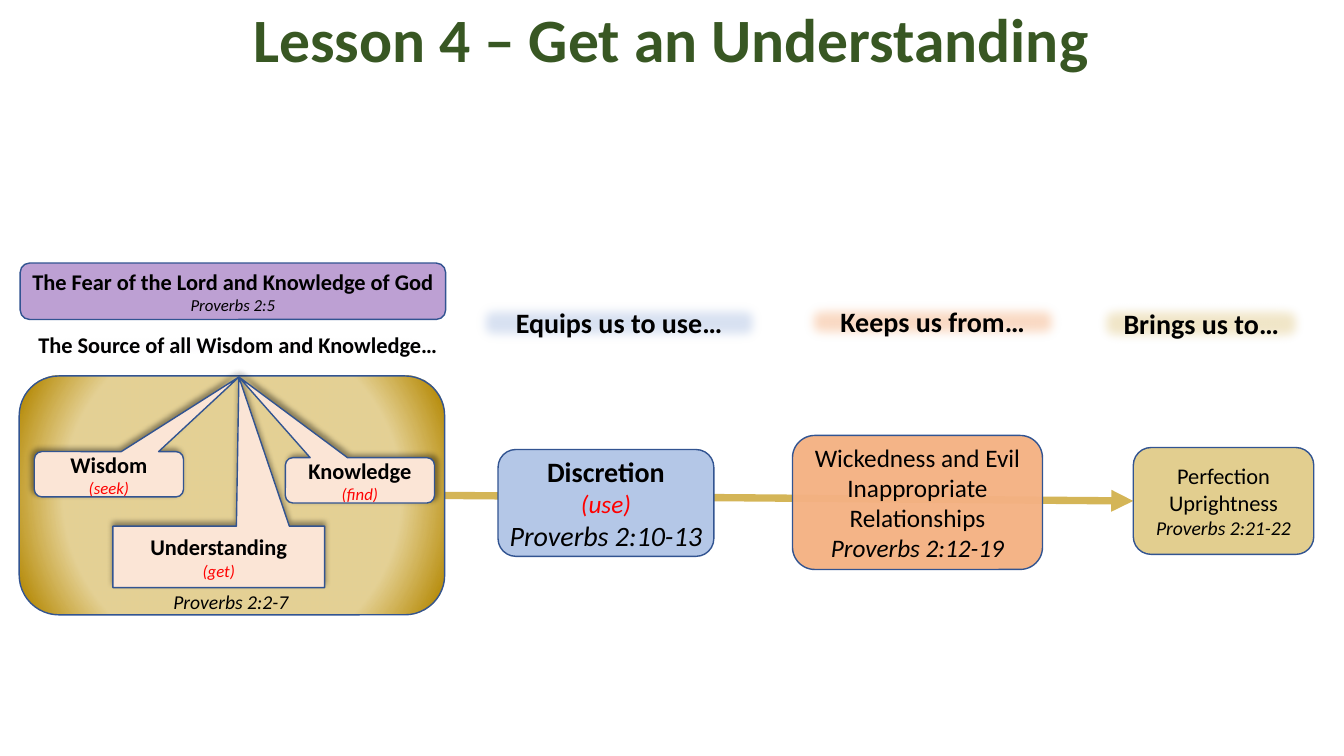
from dataclasses import dataclass

from lxml import etree
from pptx import Presentation
from pptx.dml.color import RGBColor
from pptx.enum.shapes import MSO_CONNECTOR, MSO_SHAPE
from pptx.enum.text import MSO_ANCHOR, PP_ALIGN
from pptx.oxml.ns import qn
from pptx.util import Inches, Pt

CENTER = PP_ALIGN.CENTER
TOP, MIDDLE = MSO_ANCHOR.TOP, MSO_ANCHOR.MIDDLE
RECT, ROUND = MSO_SHAPE.RECTANGLE, MSO_SHAPE.ROUNDED_RECTANGLE
SQUARE_CALLOUT = MSO_SHAPE.RECTANGULAR_CALLOUT
ROUND_CALLOUT = MSO_SHAPE.ROUNDED_RECTANGULAR_CALLOUT
STRAIGHT = MSO_CONNECTOR.STRAIGHT
LEFT_SIDE, RIGHT_SIDE = 1, 3
TITLE_ONLY = 5
CELL = 0.1  # inches per grid column and row
EMU_POINT, THOUSANDTHS, DEGREE = 12700, 1000, 60000


@dataclass(frozen=True)
class Theme:
    font: str = "Calibri"
    ink: str = "000000"
    cue: str = "FF0000"
    title: str = "385723"
    outline: str = "325491"
    gold: str = "BF9000"
    deep_gold: str = "B28600"
    purple: str = "7030A0"
    orange: str = "F4B183"
    blue: str = "B4C7E7"
    cream: str = "FBE5D6"
    title_size: int = 44
    large: int = 20
    medium: int = 18
    body: int = 16
    note: int = 14
    small: int = 12
    soft_edge: float = 8.86


def add_node(parent, tag, **attributes):
    values = {name: str(value) for name, value in attributes.items()}
    return etree.SubElement(parent, qn(f"a:{tag}"), values)


def set_alpha(element, percent):
    for color in element.iter(qn("a:srgbClr")):
        add_node(color, "alpha", val=percent * THOUSANDTHS)


class Page:
    """One slide with its theme; all places are in grid cells."""

    def __init__(self, deck, theme):
        self.theme = theme
        self.slide = deck.slides.add_slide(deck.slide_layouts[TITLE_ONLY])
        self.shapes = self.slide.shapes

    def place(self, cells):
        return [Inches(cell * CELL) for cell in cells]

    def set_lines(self, box, lines, anchor=MIDDLE, inset=0.04):
        """Each line is (words, size, style): b bold, i italic, c cue colour."""
        frame = box.text_frame
        frame.word_wrap = True
        frame.vertical_anchor = anchor
        frame.margin_left = frame.margin_right = Inches(inset)
        frame.margin_top = frame.margin_bottom = Inches(inset / 2)
        for index, (words, size, style) in enumerate(lines):
            para = frame.add_paragraph() if index else frame.paragraphs[0]
            para.text = words
            para.alignment = CENTER
            color = self.theme.cue if "c" in style else self.theme.ink
            self.set_font(para.font, size, color, "b" in style, "i" in style)

    def set_font(self, font, size, color, bold=False, italic=False):
        font.name, font.size = self.theme.font, Pt(size)
        font.bold, font.italic = bold, italic
        font.color.rgb = RGBColor.from_string(color)

    def title(self, cells, words):
        box = self.shapes.title
        box.left, box.top, box.width, box.height = self.place(cells)
        box.text_frame.vertical_anchor = TOP
        para = box.text_frame.paragraphs[0]
        para.text, para.alignment, para.line_spacing = words, CENTER, 0.9
        self.set_font(para.font, self.theme.title_size, self.theme.title, bold=True)

    def label(self, cells, lines):
        self.set_lines(self.shapes.add_textbox(*self.place(cells)), lines, inset=0.06)

    def panel(self, cells, fill, lines=(), alpha=100, kind=ROUND, outlined=True,
              **text_options):
        box = self.shapes.add_shape(kind, *self.place(cells))
        box.fill.solid()
        box.fill.fore_color.rgb = RGBColor.from_string(fill)
        if alpha < 100:
            set_alpha(box._element.spPr.find(qn("a:solidFill")), alpha)
        if outlined:
            box.line.color.rgb = RGBColor.from_string(self.theme.outline)
            box.line.width = Pt(1)
        else:
            box.line.fill.background()
        box.shadow.inherit = False
        self.set_lines(box, lines, **text_options)
        return box

    def effects(self, box):
        return box._element.spPr.find(qn("a:effectLst"))

    def heading(self, cells, fill, alpha, words, size, anchor=MIDDLE):
        """A caption on a soft-edged band."""
        box = self.panel(cells, fill, [(words, size, "b")], alpha, RECT, False,
                         anchor=anchor)
        add_node(self.effects(box), "softEdge",
                 rad=round(self.theme.soft_edge * EMU_POINT))

    def callout(self, cells, tip, kind, name, cue, direction):
        lines = [(name, self.theme.body, "b"), (cue, self.theme.small, "ic")]
        box = self.panel(cells, self.theme.cream, lines, kind=kind, inset=0.06)
        left, top, width, height = cells
        box.adjustments[0] = (tip[0] - left) / width - 0.5
        box.adjustments[1] = (tip[1] - top) / height - 0.5
        shadow = add_node(self.effects(box), "outerShdw", blurRad=4 * EMU_POINT,
                          dist=3 * EMU_POINT, dir=direction * DEGREE, rotWithShape=0)
        add_node(shadow, "srgbClr", val=self.theme.ink)
        set_alpha(shadow, 40)

    def glow(self, box, stops):
        """Swap the plain fill for a gradient around the centre."""
        solid = box._element.spPr.find(qn("a:solidFill"))
        gradient = etree.Element(qn("a:gradFill"), {"rotWithShape": "1"})
        stop_list = add_node(gradient, "gsLst")
        for position, color, alpha in stops:
            stop = add_node(stop_list, "gs", pos=position * THOUSANDTHS)
            add_node(stop, "srgbClr", val=color)
            set_alpha(stop, alpha)
        circle = add_node(gradient, "path", path="circle")
        half = 50 * THOUSANDTHS
        add_node(circle, "fillToRect", l=half, t=half, r=half, b=half)
        solid.getparent().replace(solid, gradient)

    def arrow(self):
        arrow = self.shapes.add_connector(STRAIGHT, 0, 0, 0, 0)
        arrow.line.color.rgb = RGBColor.from_string(self.theme.gold)
        arrow.line.width = Pt(5.25)
        line = arrow._element.spPr.find(qn("a:ln"))
        set_alpha(line, 65)
        add_node(line, "tailEnd", type="triangle")
        add_node(arrow._element.spPr, "effectLst")
        return arrow


def main():
    deck = Presentation()
    deck.slide_width, deck.slide_height = Inches(13.33), Inches(7.5)
    theme = Theme()
    page = Page(deck, theme)
    page.title((9.1, 0.4, 115, 9.3), "Lesson 4 – Get an Understanding")

    # Path from the source to the outcome, behind the boxes
    arrow = page.arrow()
    outcome = page.panel((112.4, 44.4, 17.9, 10.6), theme.gold, [
        ("Perfection", theme.body, ""),
        ("Uprightness", theme.body, ""),
        ("Proverbs 2:21-22", theme.note, "i")], alpha=44)
    source = page.panel((1.9, 37.3, 42.2, 23.7), theme.gold)
    page.glow(source, [(69, theme.gold, 41), (97, theme.deep_gold, 100)])
    arrow.begin_connect(source, RIGHT_SIDE)
    arrow.end_connect(outcome, LEFT_SIDE)
    page.label((15.4, 58.4, 15, 2.6), [("Proverbs 2:2-7", theme.note, "i")])

    # Captions above each stage
    page.heading((3.1, 32.7, 41, 3.3), theme.purple, 14,
                 "The Source of all Wisdom and Knowledge…", theme.body, TOP)
    for cells, fill, alpha, words in (
            ((46.7, 29.4, 29.4, 5.2), theme.blue, 50, "Equips us to use…"),
            ((79.1, 29.3, 26.8, 5.2), theme.orange, 48, "Keeps us from…"),
            ((108.1, 29.3, 22.1, 5.6), theme.gold, 22, "Brings us to…")):
        page.heading(cells, fill, alpha, words, theme.large)

    # Three callouts that share one tip
    tip = (23.7, 37.4)
    for cells, kind, name, cue, direction in (
            ((11.2, 52.2, 21, 6.1), SQUARE_CALLOUT, "Understanding", "(get)", 270),
            ((3.4, 44.8, 14.8, 4.5), ROUND_CALLOUT, "Wisdom", "(seek)", 225),
            ((28.3, 45.4, 14.8, 4.5), ROUND_CALLOUT, "Knowledge", "(find)", 315)):
        page.callout(cells, tip, kind, name, cue, direction)

    # Stages along the path
    page.panel((78.6, 43.2, 24.8, 13.3), theme.orange, [
        ("Wickedness and Evil", theme.medium, ""),
        ("Inappropriate Relationships", theme.medium, ""),
        ("Proverbs 2:12-19", theme.medium, "i")], alpha=96)
    page.panel((49.4, 44.6, 21.4, 10.6), theme.blue, [
        ("Discretion", theme.large, "b"),
        ("(use)", theme.medium, "ic"),
        ("Proverbs 2:10-13", theme.large, "i")], inset=0.06)

    # Starting point
    page.panel((2, 26.1, 42.2, 5.6), theme.purple, [
        ("The Fear of the Lord and Knowledge of God", theme.body, "b"),
        ("Proverbs 2:5", theme.small, "i")], alpha=46)

    deck.save("out.pptx")


if __name__ == "__main__":
    main()
